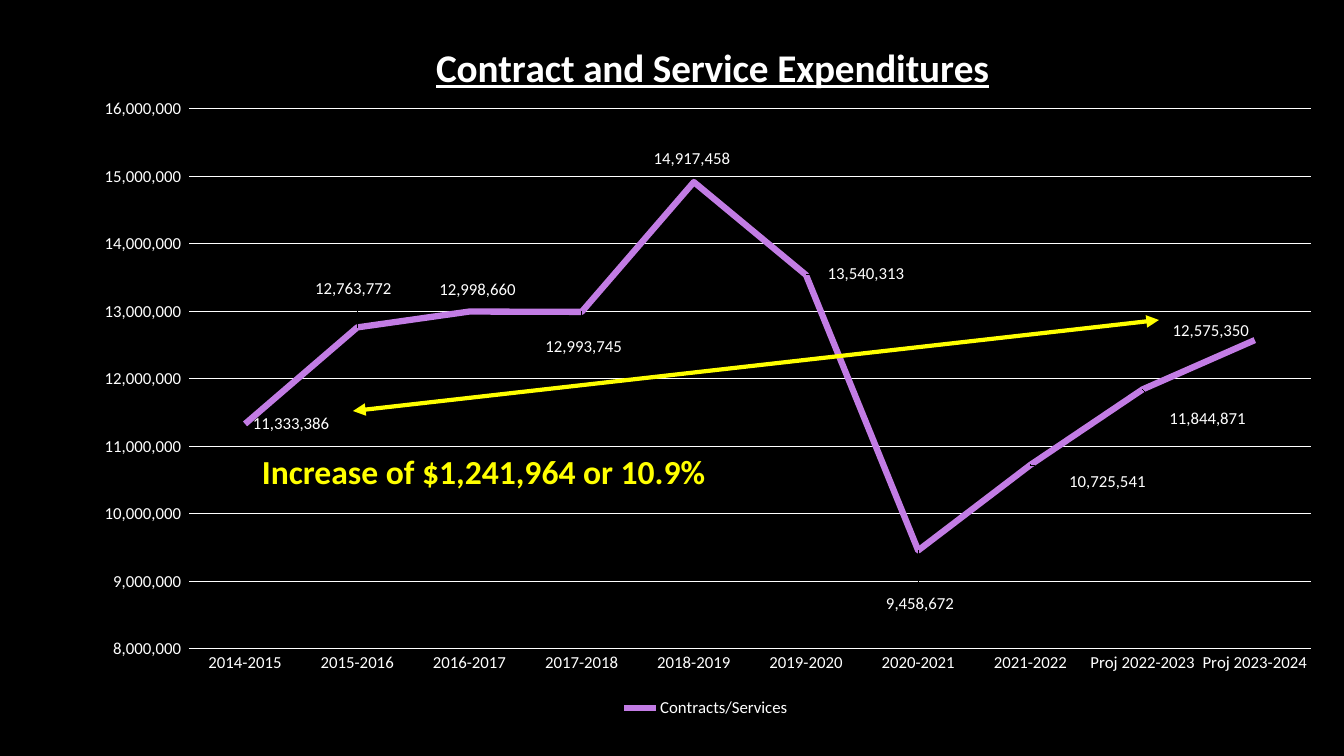
import pptx
import pptx.chart.data
import pptx.dml.color
import pptx.enum.chart
import pptx.enum.shapes
import pptx.enum.text
import pptx.oxml
import pptx.oxml.ns
import pptx.util

TITLE = "Contract and Service Expenditures"
SERIES = "Contracts/Services"
CALLOUT = "Increase of $1,241,964 or 10.9%"
EXPENDITURES = [
    ("2014-2015", 11333386, None),
    ("2015-2016", 12763772, (-50, -39)),
    ("2016-2017", 12998660, (-38, -22)),
    ("2017-2018", 12993745, (-44, 35)),
    ("2018-2019", 14917458, (-48, -23)),
    ("2019-2020", 13540313, (14, -1)),
    ("2020-2021", 9458672, (-40, 53)),
    ("2021-2022", 10725541, (31, 17)),
    ("Proj 2022-2023", 11844871, (19, 29)),
    ("Proj 2023-2024", 12575350, (-90, -9)),
]
COLORS = {"background": "000000", "text": "FFFFFF", "series": "C27CE4", "callout": "FFFF00"}
FONT = "Calibri"
NUMBER_FORMAT = '_(* #,##0_);_(* \\(#,##0\\);_(* "-"_);_(@_)'
PX = pptx.util.Inches(1) / 100.8
SLIDE = (1344, 756)
CHART = (76, 8, 1260, 714)
PLOT = (189, 109, 1122, 540)
TITLE_AT = (429, 34)
CALLOUT_BOX = (252, 446, 468, 50)
TREND = (353, 411, 1159, 320)


def emu(*lengths):
    return [round(length * PX) for length in lengths]


def rgb(name):
    return pptx.dml.color.RGBColor.from_string(COLORS[name])


def style(font, size, color="text", bold=False):
    font.name = FONT
    font.size = pptx.util.Pt(size)
    font.bold = bold
    font.color.rgb = rgb(color)


def draw_line(line, color, width):
    line.color.rgb = rgb(color)
    line.width = pptx.util.Pt(width)


def layout(x, y, size=None, absolute=True, inner=False):
    parts = [("layoutTarget", "inner")] if inner else []
    if absolute:
        parts += [("xMode", "edge"), ("yMode", "edge")]
        x, y = x - CHART[0], y - CHART[1]
    parts += [("x", x / CHART[2]), ("y", y / CHART[3])]
    if size:
        parts += [("w", size[0] / CHART[2]), ("h", size[1] / CHART[3])]
    body = "".join(f'<c:{tag} val="{value}"/>' for tag, value in parts)
    return pptx.oxml.parse_xml(
        f'<c:layout {pptx.oxml.ns.nsdecls("c")}><c:manualLayout>{body}</c:manualLayout></c:layout>')


def place(parent, after, new_layout):
    for old in parent.findall(pptx.oxml.ns.qn("c:layout")):
        parent.remove(old)
    if after is None:
        parent.insert(0, new_layout)
    else:
        parent.find(pptx.oxml.ns.qn(after)).addnext(new_layout)


def add_expenditure_chart(slide):
    data = pptx.chart.data.CategoryChartData(number_format=NUMBER_FORMAT)
    data.categories = [year for year, _, _ in EXPENDITURES]
    data.add_series(SERIES, [amount for _, amount, _ in EXPENDITURES])
    chart = slide.shapes.add_chart(
        pptx.enum.chart.XL_CHART_TYPE.LINE, *emu(*CHART), data).chart
    style(chart.font, 12)

    chart.has_title = True
    heading = chart.chart_title.text_frame.paragraphs[0].add_run()
    heading.text = TITLE
    style(heading.font, 28, bold=True)
    heading.font.underline = True
    chart.chart_title.include_in_layout = False
    place(chart.chart_title._element, "c:tx", layout(*TITLE_AT))
    place(chart._chartSpace.chart.plotArea, None, layout(*PLOT[:2], PLOT[2:], inner=True))

    chart.has_legend = True
    chart.legend.position = pptx.enum.chart.XL_LEGEND_POSITION.BOTTOM
    chart.legend.include_in_layout = False
    style(chart.legend.font, 12)

    years, amounts = chart.category_axis, chart.value_axis
    for axis in (years, amounts):
        axis.major_tick_mark = pptx.enum.chart.XL_TICK_MARK.NONE
        style(axis.tick_labels.font, 12)
    draw_line(years.format.line, "text", 0.75)
    amounts.format.line.fill.background()
    amounts.minimum_scale, amounts.maximum_scale = 8000000, 16000000
    amounts.major_unit = 1000000
    amounts.tick_labels.number_format = NUMBER_FORMAT
    amounts.tick_labels.number_format_is_linked = False
    draw_line(amounts.major_gridlines.format.line, "text", 0.75)

    chart.plots[0].vary_by_categories = False
    spending = chart.plots[0].series[0]
    spending.smooth = False
    spending.marker.style = pptx.enum.chart.XL_MARKER_STYLE.NONE
    draw_line(spending.format.line, "series", 4.5)
    labels = spending.data_labels
    labels.show_value = True
    labels.number_format = NUMBER_FORMAT
    labels.number_format_is_linked = False
    labels.position = pptx.enum.chart.XL_LABEL_POSITION.RIGHT
    style(labels.font, 12)
    for index, (_, _, shift) in enumerate(EXPENDITURES):
        if shift:
            label = spending.points[index].data_label
            label.position = pptx.enum.chart.XL_LABEL_POSITION.RIGHT
            style(label.font, 12)
            element = labels._element.xpath(f"c:dLbl[c:idx/@val='{index}']")[0]
            place(element, "c:idx", layout(*shift, absolute=False))


def add_callout(slide):
    frame = slide.shapes.add_textbox(*emu(*CALLOUT_BOX)).text_frame
    frame.word_wrap = False
    frame.auto_size = pptx.enum.text.MSO_AUTO_SIZE.SHAPE_TO_FIT_TEXT
    increase = frame.paragraphs[0].add_run()
    increase.text = CALLOUT
    style(increase.font, 24, "callout", True)


def add_trend_arrow(slide):
    trend = slide.shapes.add_connector(
        pptx.enum.shapes.MSO_CONNECTOR.STRAIGHT, *emu(*TREND))
    draw_line(trend.line, "callout", 3)
    outline = trend.line._get_or_add_ln()
    for end in ("headEnd", "tailEnd"):
        outline.append(pptx.oxml.parse_xml(
            f'<a:{end} {pptx.oxml.ns.nsdecls("a")} type="triangle"/>'))
    trend._element.spPr.append(pptx.oxml.parse_xml(
        f'<a:effectLst {pptx.oxml.ns.nsdecls("a")}/>'))


def main():
    deck = pptx.Presentation()
    deck.slide_width, deck.slide_height = emu(*SLIDE)
    slide = deck.slides.add_slide(deck.slide_layouts[6])
    slide.background.fill.solid()
    slide.background.fill.fore_color.rgb = rgb("background")
    add_expenditure_chart(slide)
    add_callout(slide)
    add_trend_arrow(slide)
    deck.save("out.pptx")


if __name__ == "__main__":
    main()
